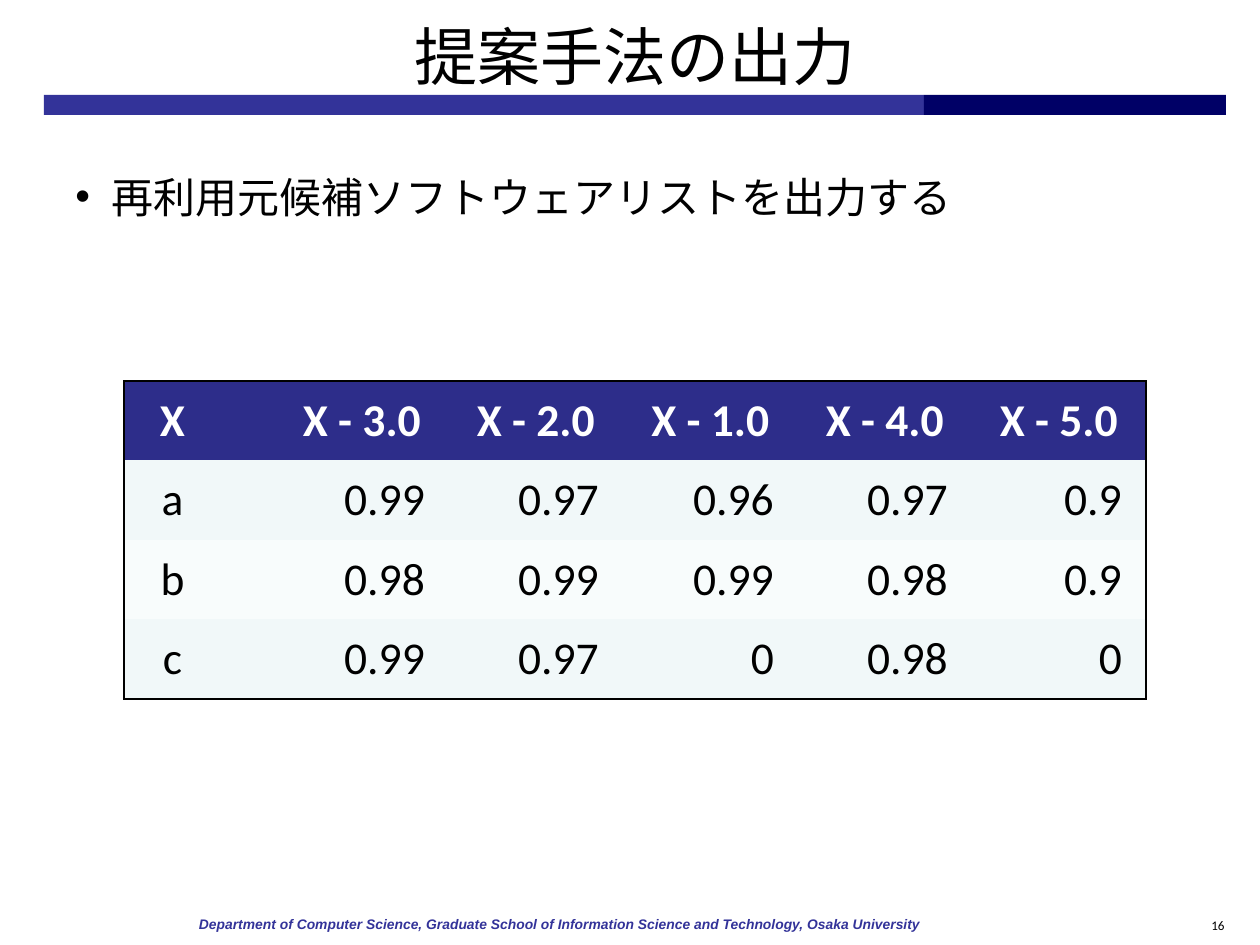
from lxml.etree import SubElement
from pptx import Presentation
from pptx.dml.color import RGBColor
from pptx.enum.shapes import MSO_SHAPE as SHAPE
from pptx.enum.text import MSO_ANCHOR as ANCHOR, PP_ALIGN as ALIGN
from pptx.oxml.ns import qn
from pptx.util import Emu, Pt

BLACK = RGBColor(0x00, 0x00, 0x00)
WHITE = RGBColor(0xFF, 0xFF, 0xFF)
INDIGO = RGBColor(0x33, 0x33, 0x99)
NAVY = RGBColor(0x00, 0x00, 0x66)
HEADER = RGBColor(0x2D, 0x2D, 0x8A)
BANDS = (RGBColor(0xF1, 0xF8, 0xF9), RGBColor(0xF8, 0xFC, 0xFC))

COLUMNS = (97, 54, 174, 174, 175, 174, 174)
ROWS = (
    ("X", "", "X - 3.0", "X - 2.0", "X - 1.0", "X - 4.0", "X - 5.0"),
    ("a", "", "0.99", "0.97", "0.96", "0.97", "0.9"),
    ("b", "", "0.98", "0.99", "0.99", "0.98", "0.9"),
    ("c", "", "0.99", "0.97", "0", "0.98", "0"),
)


def px(n):
    return Emu(round(n * 914400 / 126))


def write(p, text, size, color=BLACK, font="Calibri", align=ALIGN.LEFT,
          bold=False, italic=False):
    p.text = text
    p.alignment = align
    for r in p.runs:
        f = r.font
        f.name, f.size, f.bold, f.italic = font, Pt(size), bold, italic
        f.color.rgb = color


def add_text(slide, x, y, w, h, text, size, **style):
    tf = slide.shapes.add_textbox(px(x), px(y), px(w), px(h)).text_frame
    tf.word_wrap = True
    write(tf.paragraphs[0], text, size, **style)
    return tf


def add_bar(slide, x, y, w, h, color):
    s = slide.shapes.add_shape(SHAPE.RECTANGLE, px(x), px(y), px(w), px(h))
    s.shadow.inherit = False
    s.fill.solid()
    s.fill.fore_color.rgb = color
    s.line.fill.background()


def add_header(slide, x, y, w, h):
    # Title above a two-tone rule
    title = slide.shapes.title
    title.left, title.top, title.width, title.height = px(x), px(y), px(w), px(h)
    tf = title.text_frame
    tf.vertical_anchor = ANCHOR.MIDDLE
    write(tf.paragraphs[0], "提案手法の出力", 36, align=ALIGN.CENTER)
    split = w - 302
    add_bar(slide, x, y + h, split, 20, INDIGO)
    add_bar(slide, x + split, y + h, w - split, 20, NAVY)


def add_body(slide, x, y, w, h):
    tf = add_text(slide, x, y, w, h, "再利用元候補ソフトウェアリストを出力する", 24)
    pPr = tf.paragraphs[0]._p.get_or_add_pPr()
    pPr.set("marL", str(px(36)))
    pPr.set("indent", str(px(-36)))
    SubElement(pPr, qn("a:buFont"), typeface="Arial")
    SubElement(pPr, qn("a:buChar"), char="•")


def set_borders(cell, visible):
    tcPr = cell._tc.get_or_add_tcPr()
    for side in "LRTB":
        ln = SubElement(tcPr, qn("a:ln" + side), w=str(Pt(1)))
        if side in visible:
            fill = SubElement(ln, qn("a:solidFill"))
            SubElement(fill, qn("a:srgbClr"), val=str(BLACK))
        else:
            SubElement(ln, qn("a:noFill"))


def add_score_table(slide, x, y, w, h):
    table = slide.shapes.add_table(len(ROWS), len(COLUMNS), px(x), px(y),
                                   px(w), px(h)).table
    for column, width in zip(table.columns, COLUMNS):
        column.width = px(width)
    last_row, last_col = len(ROWS) - 1, len(COLUMNS) - 1
    for i, values in enumerate(ROWS):
        table.rows[i].height = px(h / len(ROWS))
        for j, value in enumerate(values):
            cell = table.cell(i, j)
            # Only the outer frame is drawn
            edges = {"L": j == 0, "R": j == last_col,
                     "T": i == 0, "B": i == last_row}
            set_borders(cell, [side for side, on in edges.items() if on])
            cell.fill.solid()
            cell.fill.fore_color.rgb = BANDS[(i - 1) % 2] if i else HEADER
            if value:
                cell.margin_left = cell.margin_right = px(24)
                cell.margin_top = cell.margin_bottom = px(12)
                write(cell.text_frame.paragraphs[0], value, 26,
                      color=BLACK if i else WHITE, bold=i == 0,
                      align=ALIGN.RIGHT if i and j else ALIGN.CENTER)


def add_footer(slide, x, y, w, h):
    tf = add_text(slide, x, y, w, h,
                  "Department of Computer Science, Graduate School of "
                  "Information Science and Technology, Osaka University",
                  7.9, color=INDIGO, font="Arial", bold=True, italic=True)
    tf.margin_left = tf.margin_right = px(9)
    tf.margin_top = tf.margin_bottom = px(5)
    add_text(slide, x + 968, y, 79, 36, "16", 7.5, align=ALIGN.RIGHT)


def main():
    prs = Presentation()
    prs.slide_width, prs.slide_height = px(1260), px(945)
    slide = prs.slides.add_slide(prs.slide_layouts[5])
    add_header(slide, 44, 16, 1182, 79)
    add_body(slide, 63, 165, 1134, 679)
    add_score_table(slide, 124, 381, sum(COLUMNS), 318)
    add_footer(slide, 190, 911, 1075, 30)
    prs.save("out.pptx")


if __name__ == "__main__":
    main()
